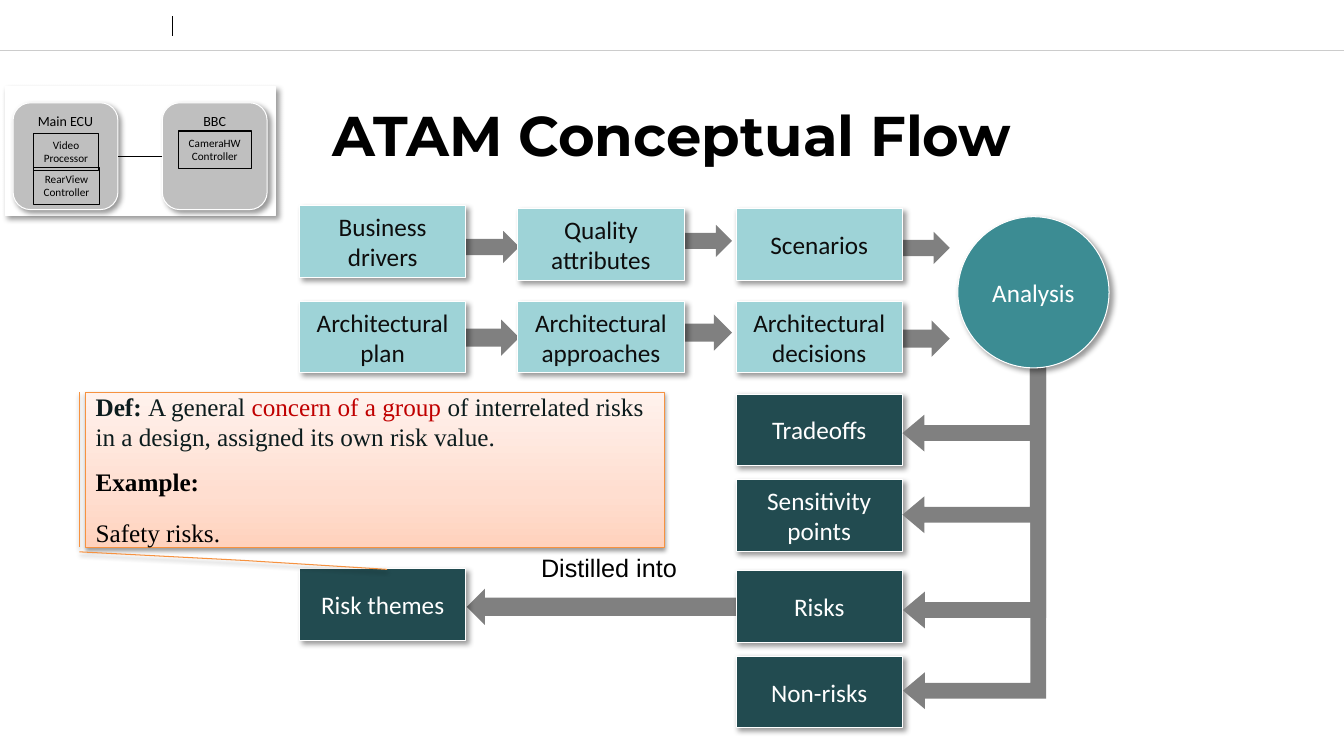
from lxml.etree import SubElement
from pptx import Presentation
from pptx.dml.color import RGBColor
from pptx.enum.shapes import MSO_CONNECTOR as Link, MSO_SHAPE as Shape
from pptx.enum.text import MSO_ANCHOR as Anchor, PP_ALIGN as Align
from pptx.oxml import parse_xml
from pptx.oxml.ns import nsdecls, qn
from pptx.util import Inches, Pt

WIDTH, HEIGHT = 13.33, 7.5
COLUMNS = [2.97 + 2.165 * step for step in range(3)]
BOX_W, BOX_H = 1.65, 0.71
GREY, PALE, DARK, TEAL = "808080", "9ED3D7", "224B50", "3C8C93"
SOFT = ("000000", 40, 4, 3, 45)
BELOW = ("000000", 38, 3.1, 1.6, 90)

INPUTS = [
    ("Business drivers", 0, 2.04), ("Quality attributes", 1, 2.07), ("Scenarios", 2, 2.07),
    ("Architectural plan", 0, 2.99), ("Architectural approaches", 1, 2.99),
    ("Architectural decisions", 2, 2.99),
]
OUTPUTS = [
    ("Tradeoffs", 2, 3.91), ("Sensitivity points", 2, 4.76), ("Risks", 2, 5.66),
    ("Non-risks", 2, 6.51), ("Risk themes", 0, 5.64),
]
ARROW_LEFTS = [4.46, 6.57, 8.73]
ARROW_ROWS = [(0.32, [2.29, 2.23, 2.3]), (0.36, [3.17, 3.12, 3.18])]
BRANCHES = [(7.34, 4, 4.65), (8.51, 3.43, 2.3), (8.04, 3.9, 3.25), (8.6, 2.71, 2.12)]
UNITS = [("BBC", 1.61), ("Main ECU", 0.13)]
MODULES = [
    ("CameraHW\nController", (1.77, 1.3, 0.72, 0.37)),
    ("Video\nProcessor", (0.33, 1.32, 0.65, 0.37)),
    ("RearView\nController", (0.33, 1.66, 0.66, 0.37)),
]
DEFINITION = [
    [("Def: ", "0C1C1D", True), ("A general ", "0C1C1D", False),
     ("concern of a group ", "C00000", False),
     ("of interrelated risks in a design, assigned its own risk value.", "0C1C1D", False)],
    [("Example:", "000000", True)],
    [("Safety risks.", "000000", False)],
]
CALLOUT_TAIL = [1.029, -0.011, 1.084, 0.271, 1.142, 0.521]
CALLOUT_STOPS = [(0, "FFD2BD"), (35, "FFDED0"), (100, "FFF2ED")]

deck = Presentation()
deck.slide_width, deck.slide_height = Inches(WIDTH), Inches(HEIGHT)
page = deck.slides.add_slide(deck.slide_layouts[6])


def color(value):
    return RGBColor.from_string(value)


def add_shadow(shape, tint, alpha, blur, distance, angle):
    effects = shape._element.spPr.find(qn("a:effectLst"))
    outer = SubElement(effects, qn("a:outerShdw"), blurRad=str(Pt(blur)), dist=str(Pt(distance)),
                       dir=str(angle * 60000), algn="tl", rotWithShape="0")
    tone = SubElement(outer, qn("a:srgbClr"), val=tint)
    SubElement(tone, qn("a:alpha"), val=str(alpha * 1000))


def add_box(kind, at, fill=None, line=None, shadow=None):
    box = page.shapes.add_shape(kind, *map(Inches, at))
    box.shadow.inherit = False
    if fill:
        box.fill.solid()
        box.fill.fore_color.rgb = color(fill)
    else:
        box.fill.background()
    if line:
        box.line.color.rgb = color(line)
        box.line.width = Pt(0.75)
    else:
        box.line.fill.background()
    if shadow:
        add_shadow(box, *shadow)
    return box


def write(box, text, size, tint, font="Calibri", anchor=Anchor.MIDDLE, wrap=True, bold=False):
    frame = box.text_frame
    frame.text = text
    frame.word_wrap = wrap
    frame.vertical_anchor = anchor
    for para in frame.paragraphs:
        para.alignment = Align.CENTER
        for span in para.runs:
            span.font.size, span.font.name, span.font.bold = Pt(size), font, bold
            span.font.color.rgb = color(tint)


def add_line(start, end, tint, width):
    line = page.shapes.add_connector(Link.STRAIGHT, *map(Inches, start + end))
    line.line.color.rgb = color(tint)
    line.line.width = Pt(width)
    SubElement(line._element.spPr, qn("a:effectLst"))
    return line


def add_text(at, *args, **options):
    write(page.shapes.add_textbox(*map(Inches, at)), *args, **options)


def flip(shape):
    shape._element.spPr.xfrm.set("flipH", "1")


def add_node(text, column, top, fill, tint):
    box = add_box(Shape.RECTANGLE, (COLUMNS[column], top, BOX_W, BOX_H), fill, "FFFFFF", SOFT)
    write(box, text, 18, tint)


def add_callout():
    callout = add_box(Shape.LINE_CALLOUT_2_BORDER_AND_ACCENT_BAR, (0.85, 3.89, 5.74, 1.54),
                      "FFFFFF", "F69240", BELOW)
    for index, value in enumerate(CALLOUT_TAIL):
        callout.adjustments[index] = value
    stops = "".join(f'<a:gs pos="{share * 1000}"><a:srgbClr val="{tint}"/></a:gs>'
                    for share, tint in CALLOUT_STOPS)
    gradient = parse_xml(f'<a:gradFill {nsdecls("a")} rotWithShape="1"><a:gsLst>{stops}</a:gsLst>'
                         '<a:lin ang="16200000" scaled="0"/></a:gradFill>')
    properties = callout._element.spPr
    properties.replace(properties.find(qn("a:solidFill")), gradient)
    frame = callout.text_frame
    frame.word_wrap = True
    frame.vertical_anchor = Anchor.MIDDLE
    for index, spans in enumerate(DEFINITION):
        para = frame.add_paragraph() if index else frame.paragraphs[0]
        para.alignment = Align.LEFT
        if index:
            para.space_before = Pt(10)
        for text, tint, bold in spans:
            span = para.add_run()
            span.text = text
            span.font.name, span.font.size, span.font.bold = "Times New Roman", Pt(18), bold
            span.font.color.rgb = color(tint)
    para.line_spacing = 1.25
    para.space_after = Pt(12)


add_line((0, 0.5), (WIDTH, 0.5), "CCCCCC", 0.25)
add_line((1.71, 0.16), (1.71, 0.36), "000000", 0.5)
flip(add_box(Shape.RIGHT_ARROW, (4.63, 5.84, 3.07, 0.36), GREY))
add_text((5.26, 5.43, 1.56, 0.4), "Distilled into", 18, "000000", font="Arial",
         anchor=Anchor.TOP, wrap=False)
add_text((0, 0.92, WIDTH, 0.83), "ATAM Conceptual Flow", 40, "000000",
         font="Montserrat", bold=True)

for height, tops in ARROW_ROWS:
    for left, top in zip(ARROW_LEFTS, tops):
        add_box(Shape.RIGHT_ARROW, (left, top, 0.69, height), GREY)
for node in INPUTS:
    add_node(*node, PALE, "0D0D0D")
for node in OUTPUTS:
    add_node(*node, DARK, "FFFFFF")

for left, top, length in BRANCHES:
    branch = add_box(Shape.BENT_UP_ARROW, (left, top, length, 1.42), GREY)
    for index, value in enumerate([0.11, 0.129, 0.154]):
        branch.adjustments[index] = value
    branch.rotation = 270
    flip(branch)
analysis = add_box(Shape.OVAL, (9.5, 2.15, 1.5, 1.5), TEAL, "FFFFFF", SOFT)
write(analysis, "Analysis", 18, "FFFFFF")

add_box(Shape.RECTANGLE, (0.05, 0.86, 2.68, 1.28), "FFFFFF", "FFFFFF", SOFT)
units = []
for name, left in UNITS:
    unit = add_box(Shape.ROUNDED_RECTANGLE, (left, 1.02, 1.04, 1.06), "BFBFBF", "FFFFFF", SOFT)
    write(unit, name, 10, "000000", anchor=Anchor.TOP)
    units.append(unit)
for name, at in MODULES:
    module = add_box(Shape.RECTANGLE, at, line="000000")
    write(module, name, 8, "000000", anchor=Anchor.TOP, wrap=False)
link = add_line((1.61, 1.55), (1.17, 1.55), "000000", 0.75)
link.begin_connect(units[0], 1)
link.end_connect(units[1], 3)
add_callout()

deck.save("out.pptx")
